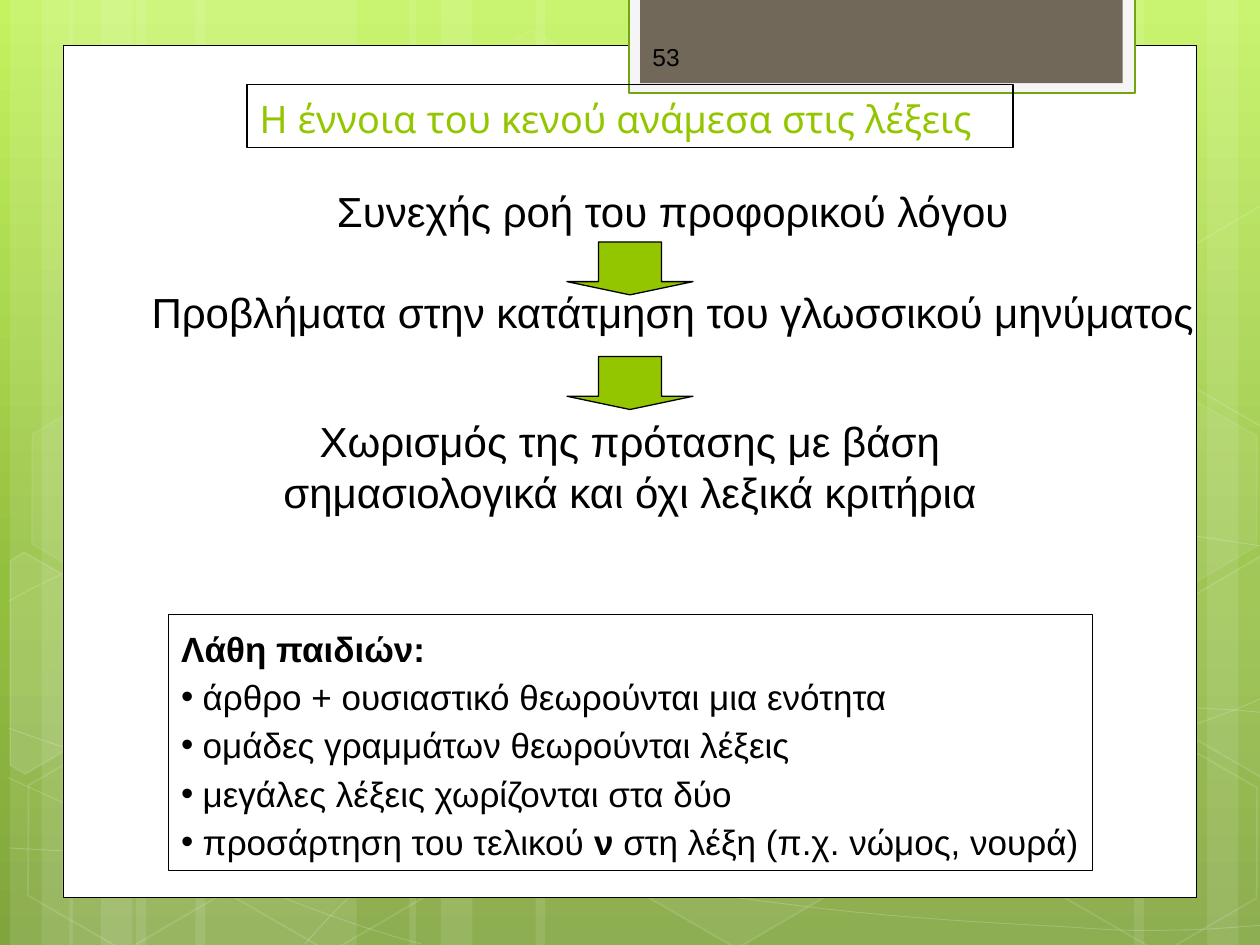
import pptx
import pptx.util
import pptx.dml.color
import pptx.enum.shapes
import pptx.enum.text
import pptx.oxml
import pptx.oxml.ns
import copy
import math

Inches, Pt = pptx.util.Inches, pptx.util.Pt
MSO = pptx.enum.shapes.MSO_SHAPE
ALIGN = pptx.enum.text.PP_ALIGN
ANCHOR = pptx.enum.text.MSO_ANCHOR
qn = pptx.oxml.ns.qn

W, H = 10, 7.5
TILT = 30  # rotation of every hexagon, degrees
COLORS = {"white": "FFFFFF", "black": "000000", "green": "94C600",
          "tab": "F5F5F5", "tab_line": "74A510", "brown": "71685A"}
BACKGROUND = [(0, "C3F35F"), (0.62, "93BF3F"), (1, "81A53E")]

# Left edge and width of the translucent columns
STRIPES = [(1.08, 1.75), (0.08, 0.5), (0.33, 0.83), (1.55, 1.75), (0.55, 0.5),
           (0.8, 0.83), (7.33, 1.75), (9.58, 0.5), (9, 0.83), (4.25, 3.08),
           (3.25, 0.5), (3.5, 0.83)]

# Start point, then two control points and an end point for each Bezier span
CURVES = [
    [(0.07, 6.73), (0.61, 6.76), (1.15, 6.79), (1.9, 6.78), (2.65, 6.77),
     (3.58, 6.75), (4.58, 6.65), (5.58, 6.55), (7, 6.36), (7.92, 6.17),
     (8.83, 5.98), (9.77, 5.68), (10.07, 5.51)],
    [(0.07, 4.77), (0.36, 4.61), (0.65, 4.46), (1.21, 4.31), (1.78, 4.16),
     (2.59, 3.94), (3.47, 3.87), (4.36, 3.8), (5.44, 3.79), (6.54, 3.87),
     (7.64, 3.95), (9.47, 4.26), (10.07, 4.34)],
    [(0.06, 6.17), (1.27, 6.72), (2.47, 7.27), (3.34, 7.49)],
    [(0.07, 5.78), (0.38, 5.89), (0.7, 6), (1.28, 6.16), (1.86, 6.31),
     (2.73, 6.56), (3.57, 6.73), (4.4, 6.9), (5.45, 7.08), (6.28, 7.18),
     (7.11, 7.29), (8, 7.33), (8.53, 7.36), (9.05, 7.4), (9.19, 7.38),
     (9.45, 7.38), (9.71, 7.37), (9.89, 7.35), (10.07, 7.34)],
    [(2.42, 7.49), (2.6, 7.29), (2.78, 7.09), (3.02, 6.91), (3.26, 6.73),
     (3.6, 6.53), (3.88, 6.39), (4.16, 6.25), (4.33, 6.19), (4.7, 6.09),
     (5.06, 5.99), (5.73, 5.85), (6.08, 5.78), (6.44, 5.71), (6.49, 5.71),
     (6.8, 5.69), (7.11, 5.66), (7.6, 5.63), (7.94, 5.62), (8.29, 5.61),
     (8.86, 5.62), (8.86, 5.62), (9.08, 5.62), (9.31, 5.62), (9.53, 5.62),
     (9.71, 5.63), (9.88, 5.64), (9.97, 5.65), (10.06, 5.66), (10.03, 5.65),
     (10.06, 5.66)],
]

# Left, top, fill opacity and line opacity in percent
HEXAGONS = [(3.34, 0.36, 4, 8), (4.97, 5.89, 6, 12), (0.11, 5.91, 0, 12),
            (0.14, 3.12, 7, 8), (1.74, 5.92, 0, 12), (7.53, 4.53, 10, 12),
            (8.34, 5.93, 0, 12), (8.34, 3.14, 7, 8)]

# Hexagons cut by the slide edge: centre, corners as seen, fill opacity
CUT_HEXAGONS = [
    ((0.36, 5.35), [(0.08, 4.45), (0.19, 4.38), (0.96, 4.82), (0.95, 5.7),
                    (0.2, 6.14), (0.08, 6.07)], 10),
    ((9.85, 5.2), [(9.26, 4.85), (10.01, 4.41), (10.09, 4.46), (10.09, 6.13),
                   (10.02, 6.17), (9.26, 5.73)], 4),
    ((9.85, 2.41), [(9.26, 2.07), (10.01, 1.63), (10.1, 1.68), (10.09, 3.35),
                    (10.02, 3.39), (9.26, 2.95)], 0),
]

FLOW_TOP = "Συνεχής ροή του προφορικού λόγου"
FLOW_MIDDLE = "Προβλήματα στην κατάτμηση του γλωσσικού μηνύματος"
FLOW_END = ["Χωρισμός της πρότασης με βάση",
            "σημασιολογικά και όχι λεξικά κριτήρια"]
MISTAKES = [[("άρθρο + ουσιαστικό θεωρούνται μια ενότητα", False)],
            [("ομάδες γραμμάτων θεωρούνται λέξεις", False)],
            [("μεγάλες λέξεις χωρίζονται στα δύο", False)],
            [("προσάρτηση του τελικού ", False), ("ν ", True),
             ("στη λέξη (π.χ. νώμος, νουρά)", False)]]


def rgb(value):
    return pptx.dml.color.RGBColor.from_string(value)


def element(tag, attributes):
    return pptx.oxml.parse_xml(
        "<a:%s %s %s/>" % (tag, pptx.oxml.ns.nsdecls("a"), attributes))


def paint(fill, color, opacity=100):
    """Fill solidly with a named colour, or leave empty."""
    if color is None or opacity == 0:
        fill.background()
        return
    fill.solid()
    fill.fore_color.rgb = rgb(COLORS[color])
    if opacity < 100:
        clr = fill._xPr.find(".//" + qn("a:srgbClr"))
        clr.append(element("alpha", 'val="%d"' % (opacity * 1000)))


def style(sp, fill=None, line=None, width=0.75, fill_op=100, line_op=100):
    sp.shadow.inherit = False
    paint(sp.fill, fill, fill_op)
    paint(sp.line.fill, line, line_op)
    if line:
        sp.line.width = Pt(width)


def add_shape(s, kind, box, **look):
    sp = s.shapes.add_shape(kind, *map(Inches, box))
    style(sp, **look)
    return sp


def add_outline(s, points, closed, **look):
    points = [(Inches(x), Inches(y)) for x, y in points]
    builder = s.shapes.build_freeform(*points[0])
    builder.add_line_segments(points[1:], close=closed)
    sp = builder.convert_to_shape()
    style(sp, **look)
    return sp


def add_curve(s, points, **look):
    """Open outline whose points are joined three by three into Bezier spans."""
    sp = add_outline(s, points, False, **look)
    lines = list(sp.element.iter(qn("a:lnTo")))
    for i in range(0, len(lines), 3):
        span = element("cubicBezTo", "")
        lines[i].addprevious(span)
        for line in lines[i:i + 3]:
            span.append(line[0])
            line.getparent().remove(line)


def turn_back(point, centre):
    """Undo the hexagon tilt of a point about a centre."""
    a = math.radians(-TILT)
    dx, dy = point[0] - centre[0], point[1] - centre[1]
    return (centre[0] + dx * math.cos(a) - dy * math.sin(a),
            centre[1] + dx * math.sin(a) + dy * math.cos(a))


def set_font(p, size, color="black", name="Arial", align=ALIGN.LEFT):
    p.alignment = align
    p.font.size, p.font.name = Pt(size), name
    p.font.color.rgb = rgb(COLORS[color])


def add_text(s, box, lines, size, align=ALIGN.CENTER, gap=0, anchor=ANCHOR.TOP):
    tf = s.shapes.add_textbox(*map(Inches, box)).text_frame
    tf.word_wrap, tf.vertical_anchor = False, anchor
    for i, line in enumerate(lines):
        p = tf.add_paragraph() if i else tf.paragraphs[0]
        p.text = line
        p.space_before = Pt(gap if i else 0)
        set_font(p, size, align=align)


def add_bullet(p, indent=0.17):
    pPr = p._p.get_or_add_pPr()
    pPr.set("marL", str(Inches(indent)))
    pPr.set("indent", str(-Inches(indent)))
    for tag, attributes in (("buFont", 'typeface="Arial"'), ("buChar", 'char="•"')):
        pPr.insert_element_before(element(tag, attributes),
                                  "a:tabLst", "a:defRPr", "a:extLst")


def add_background(s):
    s.background.fill.gradient()
    s.background.fill.gradient_angle = 270
    stops = s.element.find(".//" + qn("a:gsLst"))
    stops.append(copy.deepcopy(stops[0]))
    for stop, (position, color) in zip(s.background.fill.gradient_stops, BACKGROUND):
        stop.position, stop.color.rgb = position, rgb(color)
    for left, width in STRIPES:
        add_shape(s, MSO.RECTANGLE, (left, 0, width, H), fill="white", fill_op=10)
    for curve in CURVES:
        add_curve(s, curve, line="white", width=0.5, line_op=20)
    for left, top, fill_op, line_op in HEXAGONS:
        sp = add_shape(s, MSO.HEXAGON, (left, top, 1.75, 1.52), fill="white",
                       fill_op=fill_op, line="white", width=1, line_op=line_op)
        sp.adjustments[0], sp.rotation = 0.285, TILT
    for centre, corners, fill_op in CUT_HEXAGONS:
        sp = add_outline(s, [turn_back(c, centre) for c in corners], True, fill="white",
                         fill_op=fill_op, line="white", width=1, line_op=12)
        sp.rotation = TILT


def add_mistakes(s):
    sp = add_shape(s, MSO.RECTANGLE, (1.34, 4.88, 7.33, 2.03), line="black")
    tf = sp.text_frame
    tf.word_wrap, tf.vertical_anchor = False, ANCHOR.TOP
    for i, runs in enumerate([[("Λάθη παιδιών:", True)]] + MISTAKES):
        p = tf.add_paragraph() if i else tf.paragraphs[0]
        p.line_spacing = 1.15
        set_font(p, 20)
        if i:
            add_bullet(p)
        for text, bold in runs:
            r = p.add_run()
            r.text, r.font.bold = text, bold


def add_title(s, text):
    sp = s.shapes.title
    sp.left, sp.top, sp.width, sp.height = map(Inches, (1.96, 0.67, 6.08, 0.5))
    sp.line.color.rgb, sp.line.width = rgb(COLORS["black"]), Pt(0.75)
    tf = sp.text_frame
    tf.text, tf.vertical_anchor = text, ANCHOR.BOTTOM
    set_font(tf.paragraphs[0], 21.6, "green", "Quicksand")
    s.shapes.element.append(sp.element)  # bring in front of the panel


def main():
    prs = pptx.Presentation()
    prs.slide_width, prs.slide_height = Inches(W), Inches(H)
    s = prs.slides.add_slide(prs.slide_layouts[5])
    add_background(s)

    # White panel and page-number tab
    add_shape(s, MSO.RECTANGLE, (0.5, 0.36, 9, 6.76), fill="white", line="black", width=0.5)
    add_shape(s, MSO.RECTANGLE, (4.99, -0.02, 4.02, 0.76), fill="tab", line="tab_line", width=1.25)
    add_shape(s, MSO.RECTANGLE, (5.08, -0.02, 3.83, 0.68), fill="brown")
    add_text(s, (5.08, 0.25, 1.46, 0.4), ["53"], 14, ALIGN.LEFT, anchor=ANCHOR.MIDDLE)
    add_title(s, "Η έννοια του κενού ανάμεσα στις λέξεις")

    # Flow of three statements
    add_text(s, (1.08, 1.42, 8.52, 1.3), [FLOW_TOP, FLOW_MIDDLE], 24, gap=29)
    for top in (1.92, 2.83):
        sp = add_shape(s, MSO.DOWN_ARROW, (4.5, top, 1, 0.42), fill="green", line="black")
        sp.adjustments[0], sp.adjustments[1] = 0.5, 0.25
    add_text(s, (2.13, 3.25, 5.74, 0.9), FLOW_END, 24)
    add_mistakes(s)
    prs.save("out.pptx")


if __name__ == "__main__":
    main()
